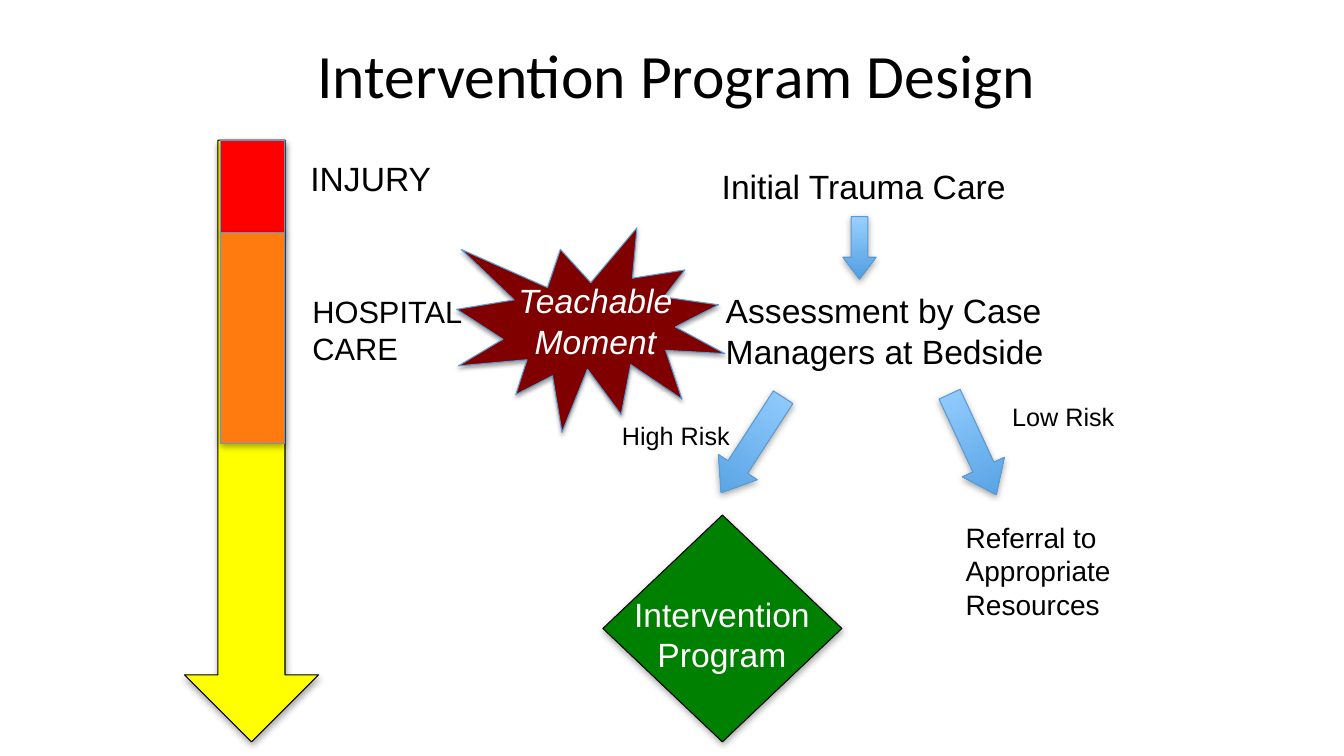
from dataclasses import dataclass

from lxml import etree
from pptx import Presentation
from pptx import util as u
from pptx.dml.color import RGBColor
from pptx.enum import shapes, text
from pptx.oxml.ns import qn

COLORS = {
    "black": "000000", "white": "FFFFFF", "yellow": "FFFF00", "red": "FF0000",
    "orange": "FF7A0F", "green": "008000", "maroon": "800000",
    "blue_light": "98D0FF", "blue_dark": "519EE2", "blue_line": "5D9ACF",
}
Box = tuple[float, float, float, float]
KIND = shapes.MSO_SHAPE


@dataclass
class Figure:
    kind: KIND
    box: Box
    fill: str = ""  # empty means the blue gradient
    line: str = "blue_line"
    rotation: float = 0
    head: float = 0.5  # length of an arrow's head
    blur: float = 5


@dataclass
class Label:
    wording: str
    box: Box
    size: int = 24
    color: str = "black"
    centered: bool = False
    italic: bool = False


def rgb(name: str) -> RGBColor:
    return RGBColor.from_string(COLORS[name])


def inches(box: Box) -> list[u.Inches]:
    return [u.Inches(length) for length in box]


def add_shadow(shape, blur: float) -> None:
    shape.shadow.inherit = False
    effects = shape._element.spPr.find(qn("a:effectLst"))
    shadow = etree.SubElement(
        effects, qn("a:outerShdw"), blurRad=str(u.Pt(blur)), dist=str(u.Pt(1.8)),
        dir="5400000", rotWithShape="0")
    color = etree.SubElement(shadow, qn("a:srgbClr"), val=COLORS["black"])
    etree.SubElement(color, qn("a:alpha"), val="35000")


def draw_figure(slide, figure: Figure) -> None:
    shape = slide.shapes.add_shape(figure.kind, *inches(figure.box))
    shape.rotation = figure.rotation
    if figure.kind == KIND.DOWN_ARROW:
        shape.adjustments[1] = figure.head
    if figure.fill:
        shape.fill.solid()
        shape.fill.fore_color.rgb = rgb(figure.fill)
    else:
        shape.fill.gradient()
        shape.fill.gradient_angle = 270
        for stop, name in zip(shape.fill.gradient_stops, ("blue_light", "blue_dark")):
            stop.color.rgb = rgb(name)
    shape.line.color.rgb = rgb(figure.line)
    shape.line.width = u.Pt(0.75)
    add_shadow(shape, figure.blur)


def format_text(frame, font: str, size: int, color: str, centered: bool,
                italic: bool = False) -> None:
    for paragraph in frame.paragraphs:
        paragraph.alignment = text.PP_ALIGN.CENTER if centered else text.PP_ALIGN.LEFT
        for run in paragraph.runs:
            run.font.name = font
            run.font.size = u.Pt(size)
            run.font.italic = italic
            run.font.color.rgb = rgb(color)


def draw_label(slide, label: Label) -> None:
    frame = slide.shapes.add_textbox(*inches(label.box)).text_frame
    frame.word_wrap = True
    frame.text = label.wording
    format_text(frame, "Arial", label.size, label.color, label.centered, label.italic)


def draw_title(slide, wording: str) -> None:
    title = slide.shapes.title
    title.left, title.top, title.width, title.height = inches((0.96, 0.05, 11.5, 1.45))
    frame = title.text_frame
    frame.text = wording
    frame.vertical_anchor = text.MSO_ANCHOR.MIDDLE
    frame.margin_top = frame.margin_bottom = u.Inches(0.1)
    frame.paragraphs[0].line_spacing = 0.9
    format_text(frame, "Calibri", 44, "black", centered=True)


# Parts from back to front
PARTS = [
    # Timeline from injury through recovery
    Figure(KIND.DOWN_ARROW, (1.83, 1.39, 1.33, 5.97), "yellow", "black"),
    Figure(KIND.RECTANGLE, (2.19, 1.39, 0.63, 0.93), "red"),
    Figure(KIND.RECTANGLE, (2.19, 2.31, 0.63, 2.09), "orange"),
    Label("INJURY", (2.98, 1.52, 1.58, 0.5)),
    Label("HOSPITAL CARE", (3, 2.86, 1.92, 0.84), 22),
    # Care pathway
    Label("Assessment by Case Managers at Bedside", (7.1, 2.83, 3.93, 0.91)),
    Figure(KIND.DOWN_ARROW, (7.23, 3.85, 0.46, 1.13), rotation=33, head=0.66),
    Figure(KIND.DOWN_ARROW, (9.42, 3.86, 0.46, 1.1), rotation=335.1, head=0.66),
    Label("Referral to Appropriate Resources", (9.48, 5.11, 2.33, 1.11), 20),
    Label("Initial Trauma Care", (7.06, 1.6, 3.61, 0.51)),
    Figure(KIND.DOWN_ARROW, (8.36, 2.15, 0.33, 0.62), head=0.66),
    Label("Low Risk", (9.94, 3.93, 1.39, 0.41), 18),
    Label("High Risk", (6.07, 4.12, 1.7, 0.41), 18),
    # Intervention diamond
    Figure(KIND.DIAMOND, (5.98, 5.11, 2.37, 2.25), "green", "black"),
    Label("Intervention Program", (6.09, 5.84, 2.14, 1.21), color="white", centered=True),
    # Teachable moment burst
    Figure(KIND.EXPLOSION1, (4.53, 2.26, 2.66, 2.03), "maroon", blur=3.1),
    Label("Teachable\nMoment", (4.88, 2.73, 2.05, 0.91), color="white",
          centered=True, italic=True),
]


def main() -> None:
    deck = Presentation()
    deck.slide_width, deck.slide_height = u.Inches(13.33), u.Inches(7.5)
    slide = deck.slides.add_slide(deck.slide_layouts[5])
    draw_title(slide, "Intervention Program Design")
    for part in PARTS:
        if isinstance(part, Figure):
            draw_figure(slide, part)
        else:
            draw_label(slide, part)
    deck.save("out.pptx")


if __name__ == "__main__":
    main()
